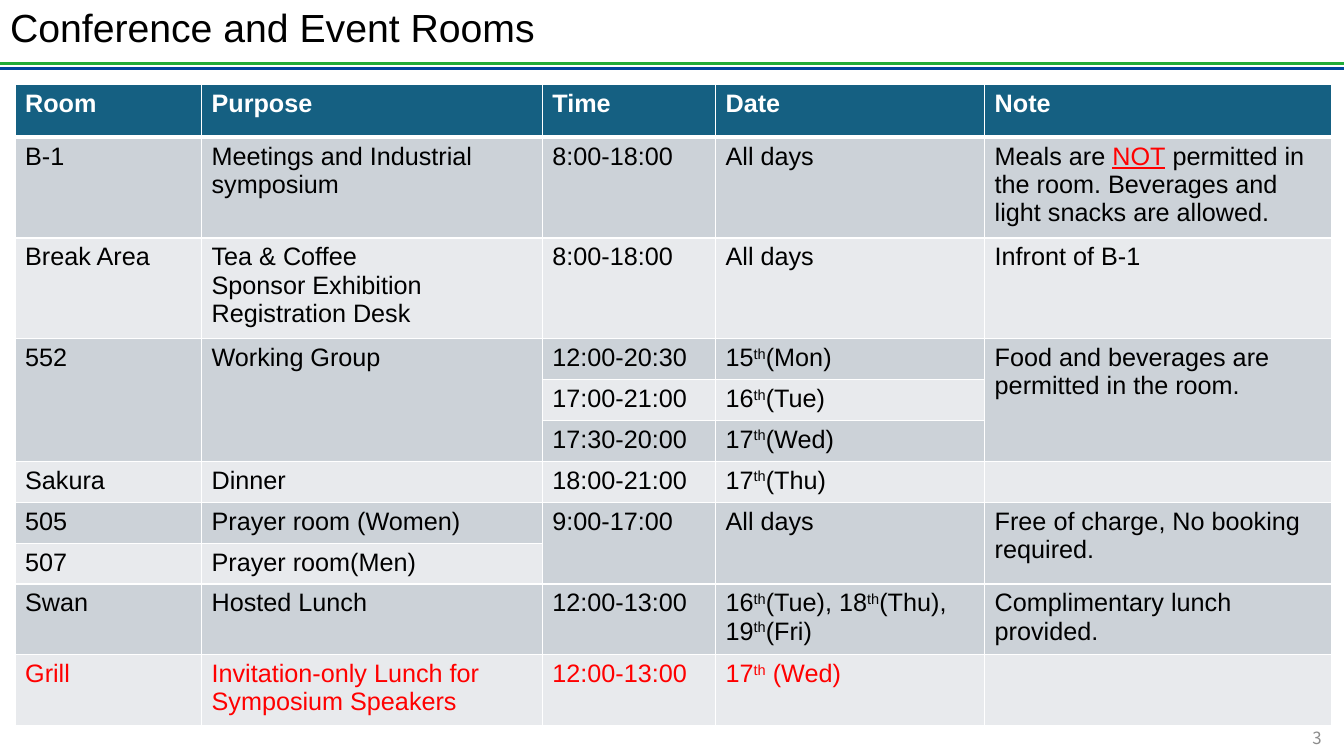
from dataclasses import dataclass

from lxml import etree
from pptx import Presentation
from pptx.dml.color import RGBColor
from pptx.enum.shapes import MSO_CONNECTOR
from pptx.enum.text import MSO_ANCHOR, MSO_AUTO_SIZE, PP_ALIGN
from pptx.oxml.ns import qn
from pptx.util import Pt

STRAIGHT = MSO_CONNECTOR.STRAIGHT
MIDDLE = MSO_ANCHOR.MIDDLE
NO_AUTOFIT = MSO_AUTO_SIZE.NONE
LEFT, RIGHT = PP_ALIGN.LEFT, PP_ALIGN.RIGHT

COLORS = {
    "text": "000000",
    "white": "FFFFFF",
    "header": "156082",
    "dark_band": "CCD2D8",
    "light_band": "E8EAED",
    "alert": "FF0000",
    "green": "21AB38",
    "blue": "00469C",
    "number": "8C8C8C",
}
FONT = "Arial"
NUMBER_FONT = "Noto Sans CJK JP"
MARK = "^"
SUPERSCRIPT = "th"
COLUMN_WIDTHS = (133.2, 243.4, 123.8, 192.2, 248)


@dataclass
class Rule:
    y: float
    color: str


@dataclass
class Row:
    height: float
    cells: tuple[str | None, ...]
    color: str = "text"


RULES = [Rule(45.4, "green"), Rule(49, "blue")]

ROWS = [
    Row(37.5, ("Room", "Purpose", "Time", "Date", "Note"), "white"),
    Row(67.5, ("B-1", "Meetings and Industrial symposium", "8:00-18:00", "All days",
               "Meals are ^NOT^ permitted in the room. Beverages and light snacks are allowed.")),
    Row(67.5, ("Break Area", "Tea & Coffee\nSponsor Exhibition\nRegistration Desk",
               "8:00-18:00", "All days", "Infront of B-1")),
    Row(29.2, ("552", "Working Group", "12:00-20:30", "15^th^(Mon)",
               "Food and beverages are permitted in the room.")),
    Row(29.2, (None, None, "17:00-21:00", "16^th^(Tue)", None)),
    Row(29.2, (None, None, "17:30-20:00", "17^th^(Wed)", None)),
    Row(29.2, ("Sakura", "Dinner", "18:00-21:00", "17^th^(Thu)", "")),
    Row(29.2, ("505", "Prayer room (Women)", "9:00-17:00", "All days",
               "Free of charge, No booking required.")),
    Row(29.2, ("507", "Prayer room(Men)", None, None, None)),
    Row(47.5, ("Swan", "Hosted Lunch", "12:00-13:00",
               "16^th^(Tue), 18^th^(Thu), 19^th^(Fri)", "Complimentary lunch provided.")),
    Row(47.5, ("Grill", "Invitation-only Lunch for Symposium Speakers", "12:00-13:00",
               "17^th^ (Wed)", ""), "alert"),
]


def rgb(name: str) -> RGBColor:
    return RGBColor.from_string(COLORS[name])


def set_font(font, size: float, color: str, name: str = FONT, bold: bool = False) -> None:
    font.name = name
    font.size = Pt(size)
    font.bold = bold
    font.color.rgb = rgb(color)


def add_rule(slide, rule: Rule, width: float) -> None:
    line = slide.shapes.add_connector(STRAIGHT, 0, Pt(rule.y), Pt(width), Pt(rule.y))
    line.line.color.rgb = rgb(rule.color)
    line.line.width = Pt(2.25)
    etree.SubElement(line._element.spPr, qn("a:effectLst"))


def set_borders(cell, top: float, bottom: float) -> None:
    tc_pr = cell._tc.get_or_add_tcPr()
    for side, width in (("L", 1), ("R", 1), ("T", top), ("B", bottom)):
        ln = etree.SubElement(tc_pr, qn(f"a:ln{side}"), w=str(Pt(width)))
        fill = etree.SubElement(ln, qn("a:solidFill"))
        etree.SubElement(fill, qn("a:srgbClr"), val=COLORS["white"])


def write_cell(cell, text: str, color: str, bold: bool) -> None:
    tf = cell.text_frame
    for i, line in enumerate(text.split("\n")):
        p = tf.add_paragraph() if i else tf.paragraphs[0]
        set_font(p.font, 18, color, bold=bold)
        for j, piece in enumerate(line.split(MARK)):
            if not piece:
                continue
            r = p.add_run()
            r.text = piece
            if j % 2 and piece == SUPERSCRIPT:
                r.font._element.set("baseline", "30000")
            elif j % 2:
                r.font.underline = True
                r.font.color.rgb = rgb("alert")


def add_room_table(slide) -> None:
    frame = slide.shapes.add_table(len(ROWS), len(COLUMN_WIDTHS), Pt(10.8), Pt(60.5),
                                   Pt(sum(COLUMN_WIDTHS)), Pt(sum(row.height for row in ROWS)))
    table = frame.table
    for column, width in zip(table.columns, COLUMN_WIDTHS):
        column.width = Pt(width)
    origins = {}
    last_rows = {}
    for i, row in enumerate(ROWS):
        table.rows[i].height = Pt(row.height)
        band = "header" if i == 0 else "dark_band" if i % 2 else "light_band"
        for j, text in enumerate(row.cells):
            cell = table.cell(i, j)
            set_borders(cell, 3 if i == 1 else 1, 3 if i == 0 else 1)
            cell.fill.solid()
            cell.fill.fore_color.rgb = rgb(band)
            if text is None:
                last_rows[origins[j], j] = i
            else:
                origins[j] = i
                write_cell(cell, text, row.color, bold=i == 0)
    for (first, j), last in last_rows.items():
        table.cell(first, j).merge(table.cell(last, j))


def add_title(slide, text: str) -> None:
    title = slide.shapes.title
    title.left, title.top, title.width, title.height = 0, 0, Pt(791.3), Pt(42.5)
    tf = title.text_frame
    tf.text = text
    tf.auto_size = NO_AUTOFIT
    tf.vertical_anchor = MIDDLE
    p = tf.paragraphs[0]
    p.alignment = LEFT
    p.line_spacing = 0.9
    set_font(p.font, 28, "text")


def add_slide_number(slide, number: str) -> None:
    box = slide.shapes.add_textbox(Pt(906.5), Pt(520.5), Pt(44.6), Pt(13))
    tf = box.text_frame
    tf.word_wrap = True
    tf.vertical_anchor = MIDDLE
    p = tf.paragraphs[0]
    p.text = number
    p.alignment = RIGHT
    set_font(p.font, 12, "number", NUMBER_FONT)


def main() -> None:
    prs = Presentation()
    prs.slide_width, prs.slide_height = Pt(960), Pt(540)
    slide = prs.slides.add_slide(prs.slide_layouts.get_by_name("Title Only"))
    for rule in RULES:
        add_rule(slide, rule, 960)
    add_slide_number(slide, "3")
    add_title(slide, "Conference and Event Rooms")
    add_room_table(slide)
    prs.save("out.pptx")


if __name__ == "__main__":
    main()
